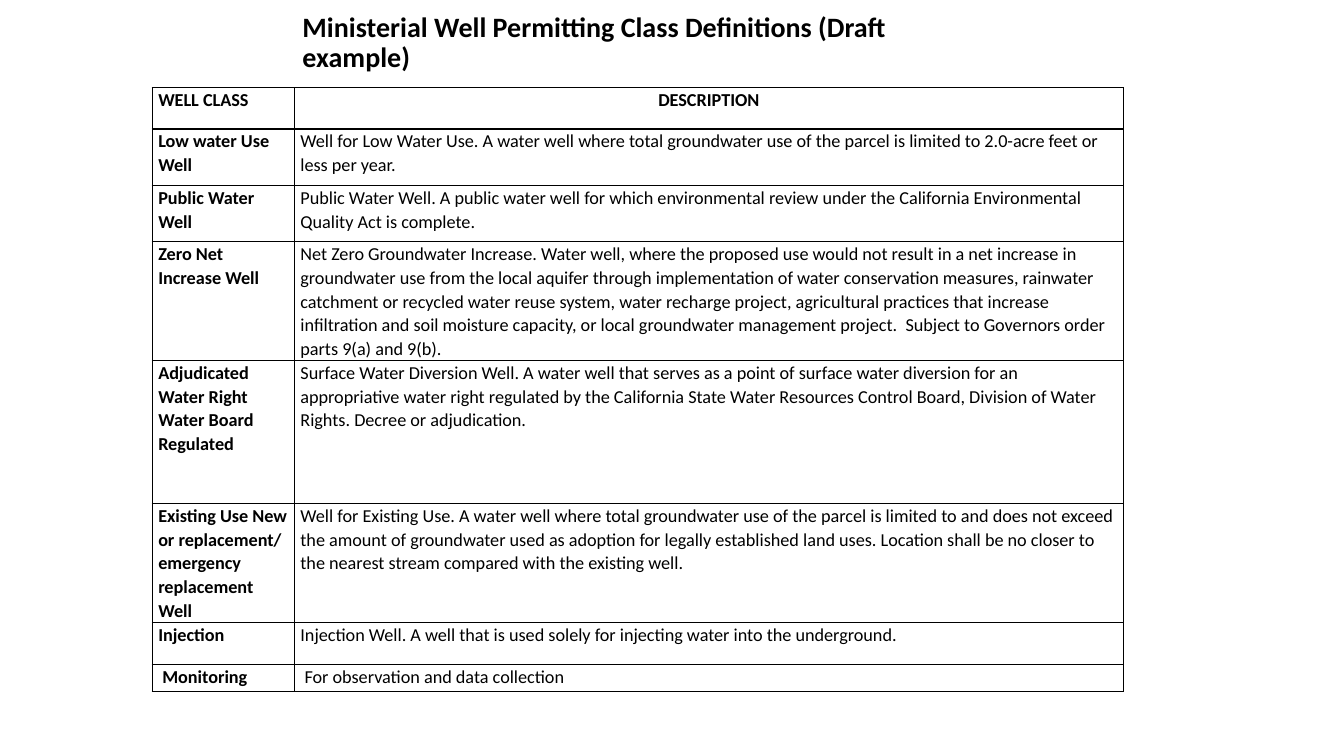
from lxml import etree
from pptx import Presentation
from pptx import util as u
from pptx.dml.color import RGBColor
from pptx.enum import text
from pptx.oxml import ns

PX = 9144  # EMU per px, 100 px to the inch
FONT = "Calibri"
COLORS = {"ink": "000000", "paper": "FFFFFF"}

COLUMN_WIDTHS = [141, 822]
ROW_HEIGHTS = [41, 56, 56, 109, 142, 113, 42, 27]
HEADER = ("WELL CLASS", "DESCRIPTION")
WELL_CLASSES = [
    ("Low water Use Well",
     "Well for Low Water Use. A water well where total groundwater use of the parcel "
     "is limited to 2.0-acre feet or less per year."),
    ("Public Water Well",
     "Public Water Well. A public water well for which environmental review under the "
     "California Environmental Quality Act is complete."),
    ("Zero Net Increase Well",
     "Net Zero Groundwater Increase. Water well, where the proposed use would not result "
     "in a net increase in groundwater use from the local aquifer through implementation "
     "of water conservation measures, rainwater catchment or recycled water reuse system, "
     "water recharge project, agricultural practices that increase infiltration and soil "
     "moisture capacity, or local groundwater management project.  Subject to Governors "
     "order parts 9(a) and 9(b)."),
    ("Adjudicated Water Right Water Board Regulated",
     "Surface Water Diversion Well. A water well that serves as a point of surface water "
     "diversion for an appropriative water right regulated by the California State Water "
     "Resources Control Board, Division of Water Rights. Decree or adjudication."),
    ("Existing Use New or replacement/\nemergency replacement Well",
     "Well for Existing Use. A water well where total groundwater use of the parcel is "
     "limited to and does not exceed the amount of groundwater used as adoption for "
     "legally established land uses. Location shall be no closer to the nearest stream "
     "compared with the existing well."),
    ("Injection",
     "Injection Well. A well that is used solely for injecting water into the underground."),
    (" Monitoring", " For observation and data collection"),
]


def px(*lengths):
    return [u.Emu(length * PX) for length in lengths]


def color(name):
    return RGBColor.from_string(COLORS[name])


def format_paragraphs(frame, size, bold, spacing, align):
    for para in frame.paragraphs:
        para.alignment = align
        para.line_spacing = spacing
        para.space_before = u.Pt(0)
        para.font.name = FONT
        para.font.size = u.Pt(size)
        para.font.bold = bold
        para.font.color.rgb = color("ink")


def add_title(page, words):
    title = page.shapes.title
    title.left, title.top, title.width, title.height = px(290, 28, 711, 30)
    frame = title.text_frame
    frame.text = words
    frame.word_wrap = True
    frame.auto_size = text.MSO_AUTO_SIZE.NONE
    frame.vertical_anchor = text.MSO_ANCHOR.MIDDLE
    format_paragraphs(frame, 20, True, 0.9, text.PP_ALIGN.LEFT)


def add_borders(cell):
    properties = cell._tc.get_or_add_tcPr()
    for place, side in enumerate(("lnL", "lnR", "lnT", "lnB")):
        line = etree.Element(ns.qn(f"a:{side}"), w=str(u.Pt(1)))
        fill = etree.SubElement(line, ns.qn("a:solidFill"))
        etree.SubElement(fill, ns.qn("a:srgbClr"), val=COLORS["ink"])
        properties.insert(place, line)


def fill_cell(cell, words, bold, align):
    cell.text = words
    cell.margin_left, cell.margin_top, cell.margin_right, cell.margin_bottom = px(6, 0, 6, 0)
    cell.fill.solid()
    cell.fill.fore_color.rgb = color("paper")
    format_paragraphs(cell.text_frame, 13, bold, 1.07, align)
    add_borders(cell)


def add_class_table(page):
    rows = [HEADER] + WELL_CLASSES
    place = px(151, 87, sum(COLUMN_WIDTHS), sum(ROW_HEIGHTS))
    table = page.shapes.add_table(len(rows), len(HEADER), *place).table
    table.horz_banding = False
    for column, width in zip(table.columns, px(*COLUMN_WIDTHS)):
        column.width = width
    for row, height in zip(table.rows, px(*ROW_HEIGHTS)):
        row.height = height
    for r, (name, description) in enumerate(rows):
        is_header = r == 0
        fill_cell(table.cell(r, 0), name, True, text.PP_ALIGN.LEFT)
        fill_cell(table.cell(r, 1), description, is_header,
                  text.PP_ALIGN.CENTER if is_header else text.PP_ALIGN.LEFT)


def main():
    deck = Presentation()
    deck.slide_width, deck.slide_height = px(1333, 750)
    page = deck.slides.add_slide(deck.slide_layouts[5])  # title only
    add_title(page, "Ministerial Well Permitting Class Definitions (Draft example)")
    add_class_table(page)
    deck.save("out.pptx")


if __name__ == "__main__":
    main()
